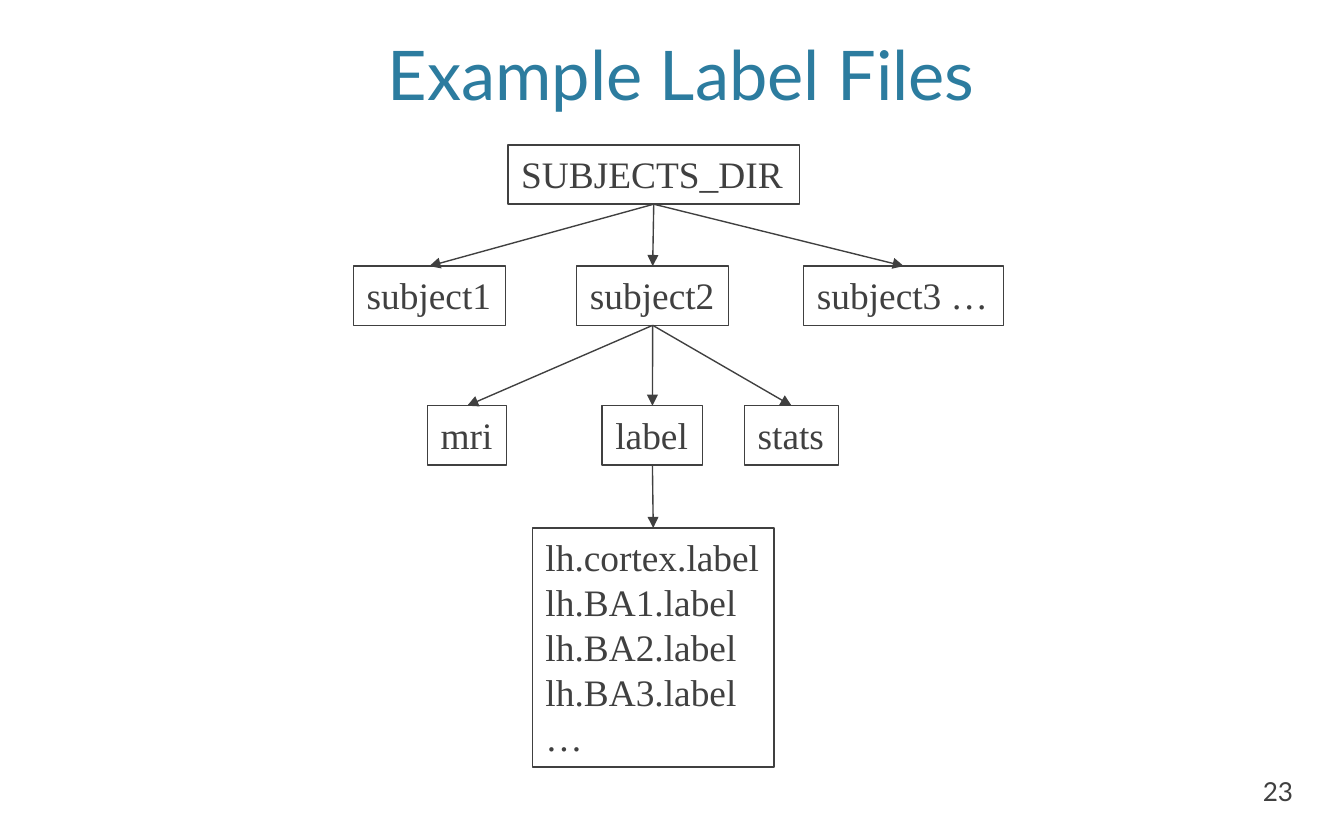
from dataclasses import dataclass

from lxml import etree
from pptx import Presentation
from pptx.dml.color import RGBColor
from pptx.enum.shapes import MSO_CONNECTOR, MSO_SHAPE
from pptx.enum.text import MSO_ANCHOR, MSO_AUTO_SIZE, PP_ALIGN
from pptx.oxml.ns import qn
from pptx.shapes.autoshape import Shape
from pptx.slide import Slide
from pptx.text.text import TextFrame
from pptx.util import Cm, Pt

RECTANGLE = MSO_SHAPE.RECTANGLE
STRAIGHT = MSO_CONNECTOR.STRAIGHT
TOP, MIDDLE, BOTTOM = MSO_ANCHOR.TOP, MSO_ANCHOR.MIDDLE, MSO_ANCHOR.BOTTOM
LEFT, CENTER, RIGHT = PP_ALIGN.LEFT, PP_ALIGN.CENTER, PP_ALIGN.RIGHT
FIT_SHAPE = MSO_AUTO_SIZE.SHAPE_TO_FIT_TEXT
TOP_SIDE, BOTTOM_SIDE = 0, 2

INK = "404040"
TITLE_BLUE = "2C7C9F"
HEADING_FONT, TREE_FONT = "Lato", "Times New Roman"
LINE_WIDTH = Pt(0.75)

FOLDER_HEIGHT = 1.12
ROOT_TOP, SUBJECT_TOP, FOLDER_TOP, FILES_TOP = 2.74, 5.03, 7.67, 9.98


@dataclass(frozen=True)
class Node:
    """A box of the directory tree, in centimetres, with its parent's text."""
    text: str
    left: float
    top: float
    width: float
    height: float = FOLDER_HEIGHT
    parent: str = ""


@dataclass(frozen=True)
class Label:
    """Free text outside the tree, in centimetres and points."""
    text: str
    left: float
    top: float
    width: float
    height: float
    size: float
    color: str
    align: PP_ALIGN
    anchor: MSO_ANCHOR


LABEL_FILES = "\n".join(
    ["lh.cortex.label", *(f"lh.BA{area}.label" for area in range(1, 4)), "…"])

TREE = [
    Node("SUBJECTS_DIR", 9.6, ROOT_TOP, 5.51),
    Node("subject1", 6.68, SUBJECT_TOP, 2.87, parent="SUBJECTS_DIR"),
    Node("subject2", 10.9, SUBJECT_TOP, 2.87, parent="SUBJECTS_DIR"),
    Node("subject3 …", 15.19, SUBJECT_TOP, 3.78, parent="SUBJECTS_DIR"),
    Node("mri", 8.08, FOLDER_TOP, 1.5, parent="subject2"),
    Node("label", 11.38, FOLDER_TOP, 1.9, parent="subject2"),
    Node("stats", 14.07, FOLDER_TOP, 1.78, parent="subject2"),
    Node(LABEL_FILES, 10.06, FILES_TOP, 4.57, 4.52, parent="label"),
]

LABELS = [
    Label("Example Label Files", 4.06, -0.36, 17.63, 2.64,
          36.7, TITLE_BLUE, CENTER, BOTTOM),
    Label("23", 21.95, 14.53, 2.74, 0.84, 14, INK, RIGHT, MIDDLE),
]


def rgb(color: str) -> RGBColor:
    return RGBColor.from_string(color)


def write_text(frame: TextFrame, text: str, font: str, size: float,
               color: str, align: PP_ALIGN, anchor: MSO_ANCHOR) -> None:
    frame.text = text
    frame.vertical_anchor = anchor
    for paragraph in frame.paragraphs:
        paragraph.alignment = align
        for run in paragraph.runs:
            run.font.name = font
            run.font.size = Pt(size)
            run.font.color.rgb = rgb(color)


def add_label(slide: Slide, label: Label) -> None:
    box = slide.shapes.add_textbox(Cm(label.left), Cm(label.top),
                                   Cm(label.width), Cm(label.height))
    box.text_frame.word_wrap = True
    write_text(box.text_frame, label.text, HEADING_FONT, label.size,
               label.color, label.align, label.anchor)


def add_node(slide: Slide, node: Node) -> Shape:
    box = slide.shapes.add_shape(RECTANGLE, Cm(node.left), Cm(node.top),
                                 Cm(node.width), Cm(node.height))
    box.shadow.inherit = False
    box.fill.background()
    box.line.color.rgb = rgb(INK)
    box.line.width = LINE_WIDTH
    write_text(box.text_frame, node.text, TREE_FONT, 20, INK, LEFT, TOP)
    box.text_frame.word_wrap = False
    box.text_frame.auto_size = FIT_SHAPE
    return box


def add_arrow(slide: Slide, parent: Shape, child: Shape) -> None:
    arrow = slide.shapes.add_connector(STRAIGHT, 0, 0, 0, 0)
    arrow.begin_connect(parent, BOTTOM_SIDE)
    arrow.end_connect(child, TOP_SIDE)
    arrow.line.color.rgb = rgb(INK)
    arrow.line.width = LINE_WIDTH
    line = arrow.line._get_or_add_ln()
    etree.SubElement(line, qn("a:tailEnd"), type="triangle")
    etree.SubElement(arrow._element.spPr, qn("a:effectLst"))


def main() -> None:
    presentation = Presentation()
    presentation.slide_width = Cm(25.4)
    presentation.slide_height = Cm(15.88)
    slide = presentation.slides.add_slide(presentation.slide_layouts[6])

    for label in LABELS:
        add_label(slide, label)
    boxes = {node.text: add_node(slide, node) for node in TREE}
    for node in TREE:
        if node.parent:
            add_arrow(slide, boxes[node.parent], boxes[node.text])

    presentation.save("out.pptx")


if __name__ == "__main__":
    main()
